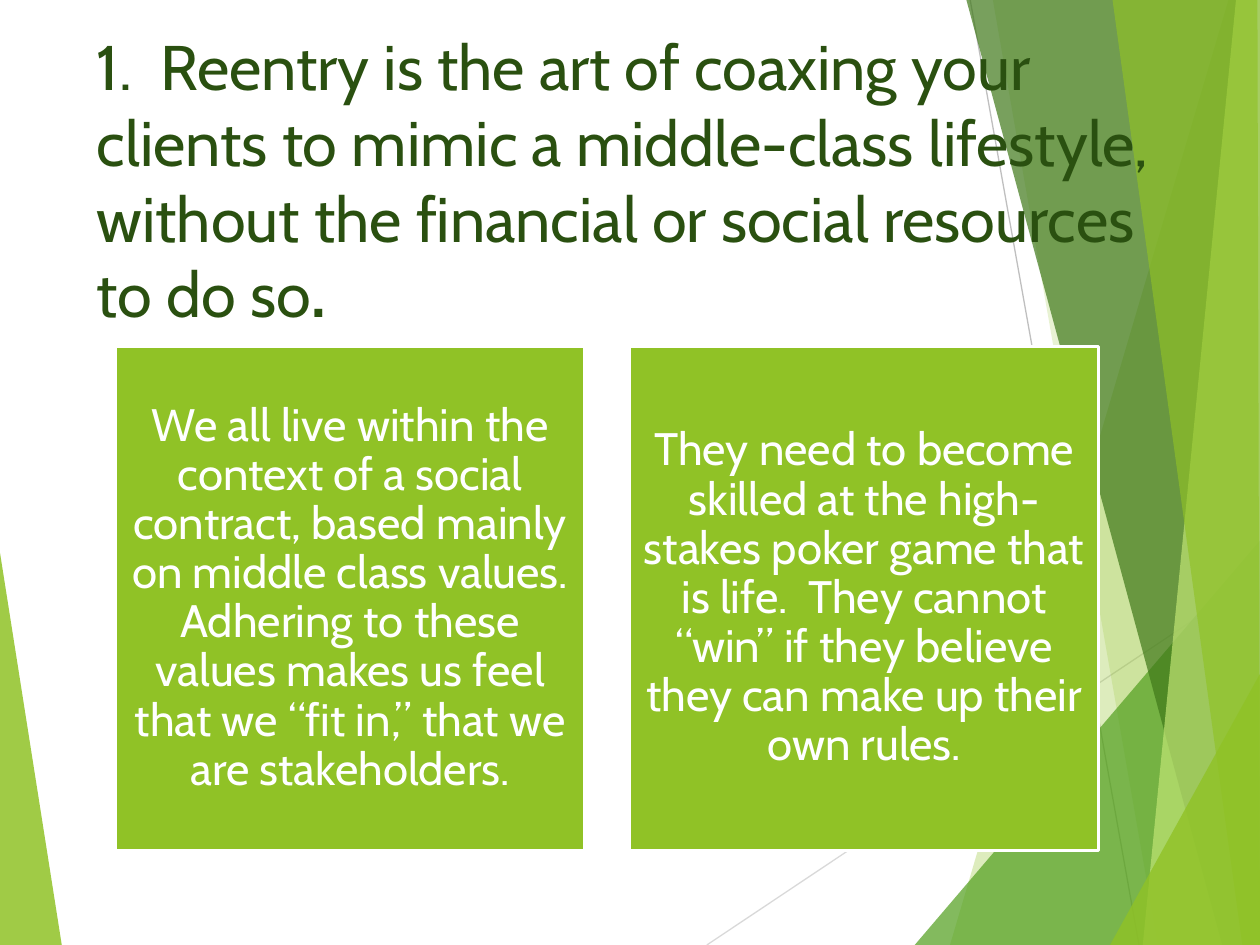
import pptx
import pptx.dml.color
import pptx.enum.shapes
import pptx.enum.text
import pptx.oxml
import pptx.oxml.ns
import pptx.util
from lxml import etree

WIDTH = pptx.util.Inches(10)
HEIGHT = pptx.util.Inches(7.5)
FONT = "Cabin"
LIME = "90C226"
WHITE = "FFFFFF"

FACETS = [
    ([(0, 58.5), (4.9, 100), (0, 100)], LIME, 85),
    ([(97.5, 0), (75.4, 100), (100, 100), (100, 0)], LIME, 30),
    ([(78.8, 0), (91.9, 100), (100, 100), (100, 0)], LIME, 20),
    ([(72.6, 100), (100, 57.2), (100, 100)], "54A021", 72),
    ([(76.7, 0), (97, 100), (100, 100), (100, 0)], "3F7819", 70),
    ([(98.1, 0), (90.7, 100), (100, 100), (100, 0)], "C0E474", 70),
    ([(88.3, 0), (98.6, 100), (100, 100), (99.8, 0)], LIME, 65),
    ([(88.1, 100), (100, 71.3), (100, 100)], LIME, 80),
]
RAYS = [((56.1, 100), (100, 60.9), "D9D9D9"), ((77, 0), (90.4, 100), "BFBFBF")]
TITLE = [
    ("1.  Reentry is the art of coaxing your clients to mimic a middle-class "
     "lifestyle, without the financial or social resources to do so", False),
    (".", True),
]
CARDS = [
    "We all live within the context of a social contract, based mainly on middle "
    "class values. Adhering to these values makes us feel that we “fit in,” that "
    "we are stakeholders.",
    "They need to become skilled at the high-stakes poker game that is life.  They "
    "cannot “win” if they believe they can make up their own rules.",
]


def rgb(value):
    """Return a colour from a hex string."""
    return pptx.dml.color.RGBColor.from_string(value)


def at(x, y):
    """Turn percentages of the slide's width and height into lengths."""
    return round(WIDTH * x / 100), round(HEIGHT * y / 100)


def add_facet(s, points, color, opacity):
    """Draw a translucent polygon."""
    start, *rest = [at(*point) for point in points]
    builder = s.shapes.build_freeform(*start)
    builder.add_line_segments(rest, close=True)
    sp = builder.convert_to_shape()
    sp.shadow.inherit = False
    sp.fill.solid()
    sp.fill.fore_color.rgb = rgb(color)
    sp.line.fill.background()
    clr = sp._element.spPr.find(".//" + pptx.oxml.ns.qn("a:srgbClr"))
    alpha = etree.SubElement(clr, pptx.oxml.ns.qn("a:alpha"))
    alpha.set("val", str(opacity * 1000))


def add_ray(s, start, end, color):
    """Draw a thin straight line."""
    line = s.shapes.add_connector(
        pptx.enum.shapes.MSO_CONNECTOR.STRAIGHT, *at(*start), *at(*end))
    line.line.color.rgb = rgb(color)
    line.line.width = pptx.util.Pt(0.75)
    etree.SubElement(line._element.spPr, pptx.oxml.ns.qn("a:effectLst"))


def add_run(p, text, size, color, bold=False):
    """Append a styled run to a paragraph."""
    r = p.add_run()
    r.text = text
    r.font.name = FONT
    r.font.size = pptx.util.Pt(size)
    r.font.bold = bold
    r.font.color.rgb = rgb(color)


def add_title(s, runs):
    """Write the heading across the top."""
    tf = s.shapes.add_textbox(*at(6.7, 2.3), *at(88.3, 34.4)).text_frame
    tf.word_wrap = True
    for text, bold in runs:
        add_run(tf.paragraphs[0], text, 36, "2A5010", bold)


def add_card(s, column, text):
    """Draw a green card with centred text in the given column."""
    sp = s.shapes.add_shape(
        pptx.enum.shapes.MSO_SHAPE.RECTANGLE,
        *at(9.2 + 40.8 * column, 36.67), *at(37.2, 53.33))
    sp.shadow.inherit = False
    sp.fill.solid()
    sp.fill.fore_color.rgb = rgb(LIME)
    sp.line.color.rgb = rgb(WHITE)
    sp.line.width = pptx.util.Pt(1.5)
    tf = sp.text_frame
    tf.word_wrap = True
    tf.vertical_anchor = pptx.enum.text.MSO_ANCHOR.MIDDLE
    inset = pptx.util.Inches(0.11)
    tf.margin_left = tf.margin_right = tf.margin_top = tf.margin_bottom = inset
    p = tf.paragraphs[0]
    p.alignment = pptx.enum.text.PP_ALIGN.CENTER
    p.line_spacing = 0.9
    add_run(p, text, 26, WHITE)


def main():
    """Build and save the slide."""
    prs = pptx.Presentation()
    prs.slide_width, prs.slide_height = WIDTH, HEIGHT
    s = prs.slides.add_slide(prs.slide_layouts[6])
    add_facet(s, *FACETS[0])
    for ray in RAYS:
        add_ray(s, *ray)
    for facet in FACETS[1:]:
        add_facet(s, *facet)
    add_title(s, TITLE)
    for column, text in enumerate(CARDS):
        add_card(s, column, text)
    prs.save("out.pptx")


if __name__ == "__main__":
    main()
